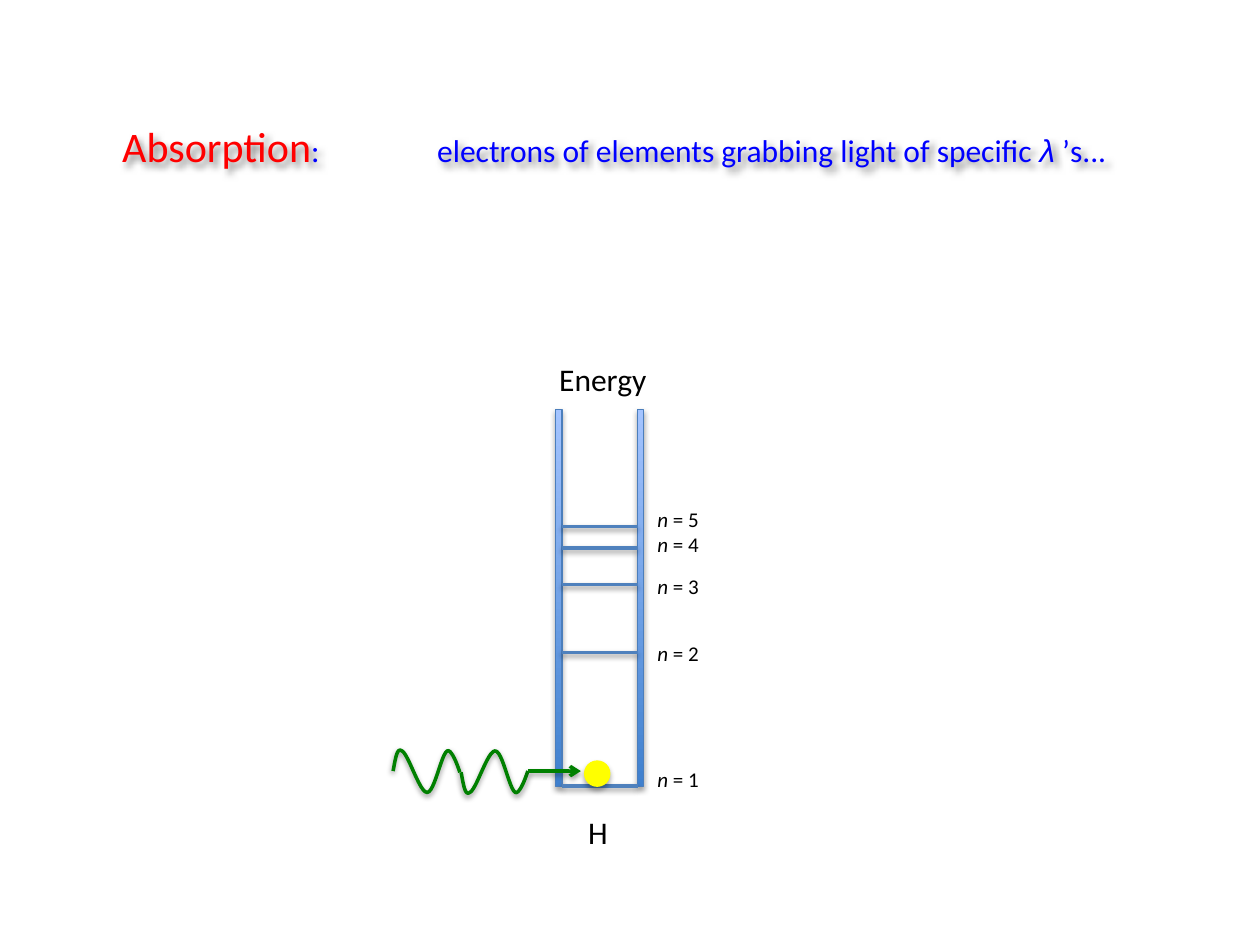
from lxml.etree import SubElement
from pptx import Presentation
from pptx.dml.color import RGBColor
from pptx.enum.shapes import MSO_CONNECTOR as Connector, MSO_SHAPE as Shape
from pptx.enum.text import MSO_ANCHOR as Anchor, MSO_AUTO_SIZE as AutoSize, PP_ALIGN as Align
from pptx.oxml.ns import qn
from pptx.util import Inches, Pt

SIZE = (10, 7.5)
RED, BLUE, BLACK = "FF0000", "0000FF", "000000"
RUNG_BLUE, RAIL_LINE, YELLOW, GREEN = "4F81BD", "4B7EBC", "FFFF00", "008000"
RAIL_GRADIENT = ("3F80CE", "A4C4FF")

SOLID_SHADOW = {"alpha": 35, "blur": 3.1, "distance": 1.8, "angle": 90}
LINE_SHADOW = {"alpha": 38, "blur": 3.1, "distance": 1.6, "angle": 90}
TEXT_SHADOW = {"alpha": 50, "blur": 4, "distance": 3, "angle": 45}

TITLE_BOX = (0.87, 0.91, 8.75, 0.96)
TITLE_TABS = (2, 2.5)
TITLE = [
    ("Absorption", {"size": Pt(24)}, RED),
    (": \t\telectrons of elements grabbing light of specific ", {}, BLUE),
    ("λ", {"name": "Arial", "italic": True}, BLUE),
    (" ’s...", {}, BLUE),
]

RAIL_LEFTS, RAIL_TOP, RAIL_WIDTH, LADDER_BOTTOM = (4.41, 5.06), 3.25, 0.05, 6.24
RUNG_HEIGHTS = (0, 1.06, 1.6, 1.89, 2.06)
LEVELS_BOX = (5.12, 3.97, 0.8, 2.79)
LEVELS = [(5, 0), (4, 0), (3, 9.5), (2, 24), (1, 57.5)]
CAPTIONS_BOX = (4.34, 2.81, 1.06, 4.04)
CAPTIONS = [("Energy", 0, 0), ("H", 237, 0.23)]

ELECTRON = (4.64, 6.04, 0.2, 0.2)
WAVE_AXIS, WAVE_STEP = 6.125, 0.54
WAVE = [
    (3.12, 6.12), (3.14, 6.02), (3.15, 5.93), (3.19, 5.96),
    (3.24, 5.98), (3.33, 6.29), (3.39, 6.29),
    (3.45, 6.29), (3.5, 5.99), (3.55, 5.96),
    (3.59, 5.94), (3.65, 6.13), (3.65, 6.13),
]
ARROW = ((4.19, 6.12), (4.61, 6.12))


def color(value):
    """Turn a hex string into a colour."""
    return RGBColor.from_string(value)


def add_shadow(shape, shadow):
    """Give a shape a soft black shadow."""
    effects = SubElement(shape._element.spPr, qn("a:effectLst"))
    outer = SubElement(effects, qn("a:outerShdw"), {
        "blurRad": str(Pt(shadow["blur"])),
        "dist": str(Pt(shadow["distance"])),
        "dir": str(shadow["angle"] * 60000),
        "rotWithShape": "0",
    })
    black = SubElement(outer, qn("a:srgbClr"), val=BLACK)
    SubElement(black, qn("a:alpha"), val=str(shadow["alpha"] * 1000))


def set_line(shape, value, width):
    """Set the colour and width of an outline."""
    shape.line.color.rgb = color(value)
    shape.line.width = Pt(width)


def add_run(paragraph, text, formats, value=BLACK):
    """Append a run in Calibri 18 unless the formats say otherwise."""
    run = paragraph.add_run()
    run.text = text
    for name, setting in {"name": "Calibri", "size": Pt(18), **formats}.items():
        setattr(run.font, name, setting)
    run.font.color.rgb = color(value)


def add_title(slide):
    """Fill the title placeholder and place its tab stops."""
    title = slide.shapes.title
    for name, length in zip(("left", "top", "width", "height"), TITLE_BOX):
        setattr(title, name, Inches(length))
    frame = title.text_frame
    formats = {"vertical_anchor": Anchor.TOP, "auto_size": AutoSize.NONE, "word_wrap": True}
    for name, setting in formats.items():
        setattr(frame, name, setting)
    paragraph = frame.paragraphs[0]
    paragraph.alignment = Align.LEFT
    for run in TITLE:
        add_run(paragraph, *run)
    properties = paragraph._p.get_or_add_pPr()
    tabs = SubElement(properties, qn("a:tabLst"))
    for position in TITLE_TABS:
        SubElement(tabs, qn("a:tab"), pos=str(Inches(position)), algn="l")
    add_shadow(title, TEXT_SHADOW)


def add_paragraphs(slide, box, gaps):
    """Add a text box and yield one paragraph for each gap above it."""
    frame = slide.shapes.add_textbox(*map(Inches, box)).text_frame
    frame.word_wrap = True
    for index, gap in enumerate(gaps):
        paragraph = frame.add_paragraph() if index else frame.paragraphs[0]
        paragraph.space_before = Pt(gap)
        yield paragraph


def add_solid(slide, kind, box, line):
    """Add an outlined shape with a shadow."""
    shape = slide.shapes.add_shape(kind, *map(Inches, box))
    set_line(shape, line, 0.75)
    return shape


def add_line(slide, start, end, value):
    """Add a straight line with a shadow."""
    line = slide.shapes.add_connector(Connector.STRAIGHT, *map(Inches, (*start, *end)))
    set_line(line, value, 2)
    add_shadow(line, LINE_SHADOW)
    return line


def add_ladder(slide):
    """Draw the rails, rungs and labels of the energy levels."""
    for left in RAIL_LEFTS:
        box = (left, RAIL_TOP, RAIL_WIDTH, LADDER_BOTTOM - RAIL_TOP)
        rail = add_solid(slide, Shape.RECTANGLE, box, RAIL_LINE)
        rail.fill.gradient()
        rail.fill.gradient_angle = 90
        for stop, value, position in zip(rail.fill.gradient_stops, RAIL_GRADIENT, (0, 1)):
            stop.color.rgb = color(value)
            stop.position = position
        add_shadow(rail, SOLID_SHADOW)
    for height in RUNG_HEIGHTS:
        y = LADDER_BOTTOM - height
        add_line(slide, (RAIL_LEFTS[0] + RAIL_WIDTH, y), (RAIL_LEFTS[1], y), RUNG_BLUE)
    paragraphs = add_paragraphs(slide, LEVELS_BOX, [gap for _, gap in LEVELS])
    for paragraph, (level, _) in zip(paragraphs, LEVELS):
        add_run(paragraph, "n", {"size": Pt(12), "italic": True})
        add_run(paragraph, f" = {level}", {"size": Pt(12)})
    paragraphs = add_paragraphs(slide, CAPTIONS_BOX, [gap for _, gap, _ in CAPTIONS])
    for paragraph, (text, _, indent) in zip(paragraphs, CAPTIONS):
        paragraph._p.get_or_add_pPr().set("marL", str(Inches(indent)))
        add_run(paragraph, text, {})


def curve_points(controls, steps=12):
    """Sample a chain of cubic curves."""
    points = [controls[0]]
    for first in range(0, len(controls) - 1, 3):
        for step in range(1, steps + 1):
            t = step / steps
            weights = ((1 - t) ** 3, 3 * t * (1 - t) ** 2, 3 * t * t * (1 - t), t ** 3)
            corners = controls[first:first + 4]
            points.append(tuple(sum(w * c[axis] for w, c in zip(weights, corners))
                                for axis in (0, 1)))
    return points


def add_photon(slide):
    """Draw the wave, its mirrored half and the arrow to the electron."""
    mirrored = [(x + WAVE_STEP, 2 * WAVE_AXIS - y) for x, y in WAVE]
    for controls in (WAVE, mirrored):
        start, *rest = [tuple(map(Inches, point)) for point in curve_points(controls)]
        builder = slide.shapes.build_freeform(*start)
        builder.add_line_segments(rest, close=False)
        wave = builder.convert_to_shape()
        wave.fill.background()
        set_line(wave, GREEN, 2)
        add_shadow(wave, LINE_SHADOW)
    arrow = add_line(slide, *ARROW, GREEN)
    SubElement(arrow.line._get_or_add_ln(), qn("a:tailEnd"), type="arrow")


def main():
    """Build the absorption slide."""
    presentation = Presentation()
    presentation.slide_width, presentation.slide_height = map(Inches, SIZE)
    slide = presentation.slides.add_slide(presentation.slide_layouts[5])
    add_title(slide)
    add_ladder(slide)
    electron = add_solid(slide, Shape.OVAL, ELECTRON, YELLOW)
    electron.fill.solid()
    electron.fill.fore_color.rgb = color(YELLOW)
    add_shadow(electron, SOLID_SHADOW)
    add_photon(slide)
    presentation.save("out.pptx")


if __name__ == "__main__":
    main()
